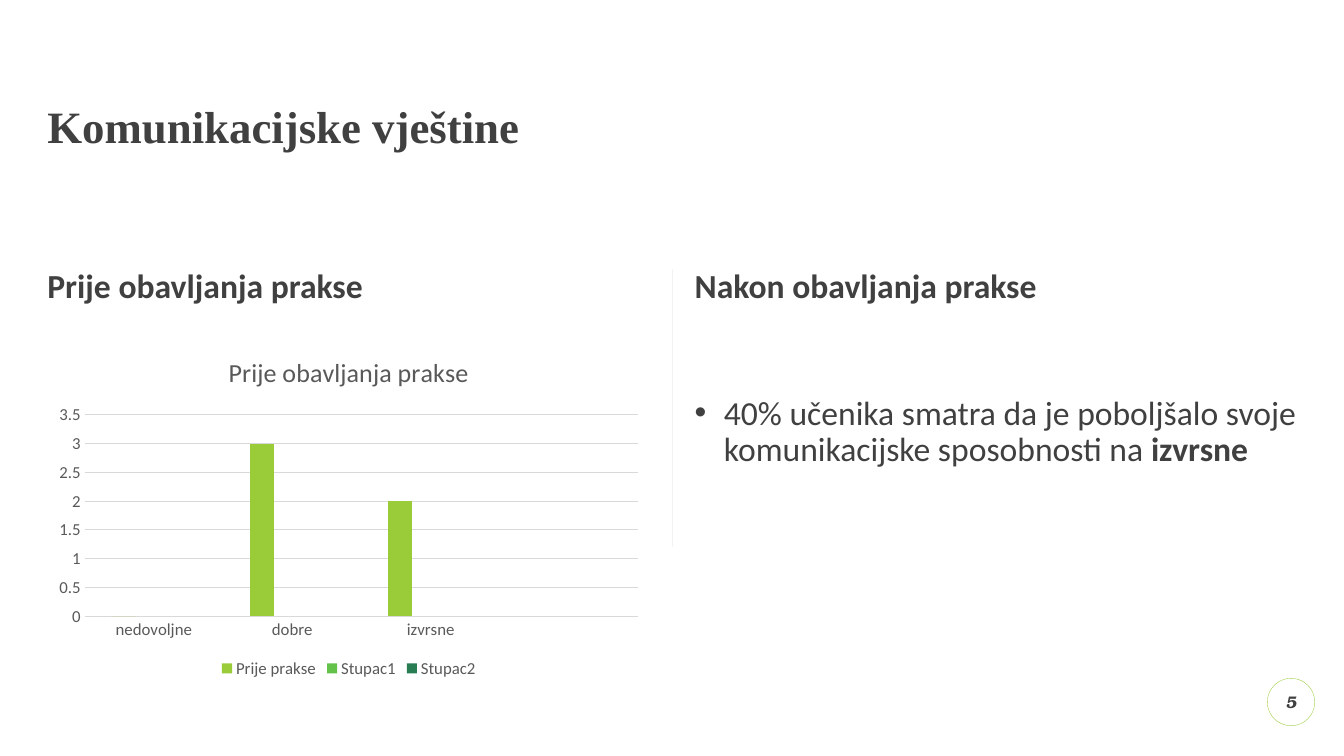
from lxml.etree import SubElement
from pptx import Presentation
from pptx.chart.data import CategoryChartData as ChartData
from pptx.dml.color import RGBColor as Rgb
from pptx.enum.chart import XL_CHART_TYPE as Kind, XL_LEGEND_POSITION as Legend, XL_TICK_MARK as Tick
from pptx.enum.shapes import MSO_CONNECTOR as Line, MSO_SHAPE as Shape
from pptx.enum.text import MSO_ANCHOR as Anchor, PP_ALIGN as Align
from pptx.oxml.ns import qn
from pptx.util import Pt

# Content
TITLE = "Komunikacijske vještine"
HEADS = ["Prije obavljanja prakse", "Nakon obavljanja prakse"]
POINT = [("40% učenika smatra da je poboljšalo svoje komunikacijske sposobnosti na ", False),
         ("izvrsne", True)]
CATS = ["nedovoljne", "dobre", "izvrsne", ""]
SERIES = [
    ("Prije prakse", [0, 3, 2, None], "lime"),
    ("Stupac1", [None] * 4, "green"),
    ("Stupac2", [None] * 4, "teal"),
]
NUMBER = "5"
COLORS = {"text": "404040", "label": "595959", "grid": "D9D9D9", "rule": "F2F2F2",
          "lime": "9ACB39", "green": "64C24A", "teal": "297D53"}

# Layout in px, 100 to the inch
PX = 9144
WIDE, HIGH = 1333, 750
LEFT, COL, GAP = 47, 598, 44
COLS = [LEFT + i * (COL + GAP) for i in range(2)]
TOP, HEAD = 267, 39
MID = LEFT + COL + GAP // 2
INDENT = 29


def px(*vals):
    return [v * PX for v in vals]


def color(name):
    return Rgb.from_string(COLORS[name])


def style(font, size, name="text", face="Calibri", bold=False):
    font.size, font.name, font.bold = Pt(size), face, bold
    font.color.rgb = color(name)


def clear(frame):
    frame.word_wrap = True
    frame.margin_left = frame.margin_top = frame.margin_right = frame.margin_bottom = 0


def add_text(slide, box, runs, size, face="Calibri", bold=False):
    frame = slide.shapes.add_textbox(*px(*box)).text_frame
    clear(frame)
    para = frame.paragraphs[0]
    para.line_spacing = 0.9
    style(para.font, size, face=face, bold=bold)
    for text, strong in runs:
        run = para.add_run()
        run.text = text
        if strong:
            run.font.bold = True
    return frame


def add_bullet(para):
    props = para._p.get_or_add_pPr()
    props.set("marL", str(INDENT * PX))
    props.set("indent", str(-INDENT * PX))
    SubElement(props, qn("a:buFont")).set("typeface", "Arial")
    SubElement(props, qn("a:buChar")).set("char", "•")
    # Font defaults come after the bullet
    props.append(props.find(qn("a:defRPr")))


def add_chart(slide, box):
    data = ChartData()
    data.categories = CATS
    for name, vals, _ in SERIES:
        data.add_series(name, vals)
    chart = slide.shapes.add_chart(Kind.COLUMN_CLUSTERED, *px(*box), data).chart
    style(chart.font, 12, "label")

    chart.has_title = True
    title = chart.chart_title
    title.include_in_layout = False
    title.text_frame.text = HEADS[0]
    style(title.text_frame.paragraphs[0].font, 18.6, "label")

    chart.has_legend = True
    chart.legend.position = Legend.BOTTOM
    chart.legend.include_in_layout = False
    style(chart.legend.font, 12, "label")

    plot = chart.plots[0]
    plot.gap_width, plot.overlap, plot.vary_by_categories = 219, -27, False
    for series, (_, _, name) in zip(plot.series, SERIES):
        series.format.fill.solid()
        series.format.fill.fore_color.rgb = color(name)

    cat, val = chart.category_axis, chart.value_axis
    for axis in (cat, val):
        axis.major_tick_mark = axis.minor_tick_mark = Tick.NONE
        style(axis.tick_labels.font, 12, "label")
    val.has_major_gridlines = True
    val.minimum_scale, val.maximum_scale, val.major_unit = 0, 3.5, 0.5
    val.format.line.fill.background()
    for line in (cat.format.line, val.major_gridlines.format.line):
        line.color.rgb, line.width = color("grid"), Pt(0.75)


def main():
    deck = Presentation()
    deck.slide_width, deck.slide_height = px(WIDE, HIGH)
    slide = deck.slides.add_slide(deck.slide_layouts[6])

    # Title and column heads
    frame = add_text(slide, (LEFT, 104, 1240, 47), [(TITLE, False)], 32, "Times New Roman", True)
    frame.vertical_anchor = Anchor.MIDDLE
    for x, head in zip(COLS, HEADS):
        frame = add_text(slide, (x, TOP, COL, HEAD), [(head, False)], 24, bold=True)
        frame.paragraphs[0].space_before = Pt(10)

    # Left column: chart
    add_chart(slide, (LEFT, 335, COL, 342))

    # Rule between the columns
    rule = slide.shapes.add_connector(Line.STRAIGHT, *px(MID, TOP, MID, 543))
    rule.line.color.rgb, rule.line.width = color("rule"), Pt(0.5)
    SubElement(rule._element.spPr, qn("a:effectLst"))

    # Right column: finding
    para = add_text(slide, (COLS[1], 393, COL, 284), POINT, 24).paragraphs[0]
    para.space_before = Pt(10)
    add_bullet(para)

    # Slide number
    badge = slide.shapes.add_shape(Shape.OVAL, *px(1257, 673, 47, 47))
    badge.shadow.inherit = False
    badge.fill.background()
    badge.line.color.rgb, badge.line.width = color("lime"), Pt(0.25)
    frame = badge.text_frame
    clear(frame)
    frame.vertical_anchor = Anchor.MIDDLE
    para = frame.paragraphs[0]
    para.text, para.alignment = NUMBER, Align.CENTER
    style(para.font, 12, face="TeX Gyre Bonum", bold=True)
    para.font.italic = True

    deck.save("out.pptx")


if __name__ == "__main__":
    main()
